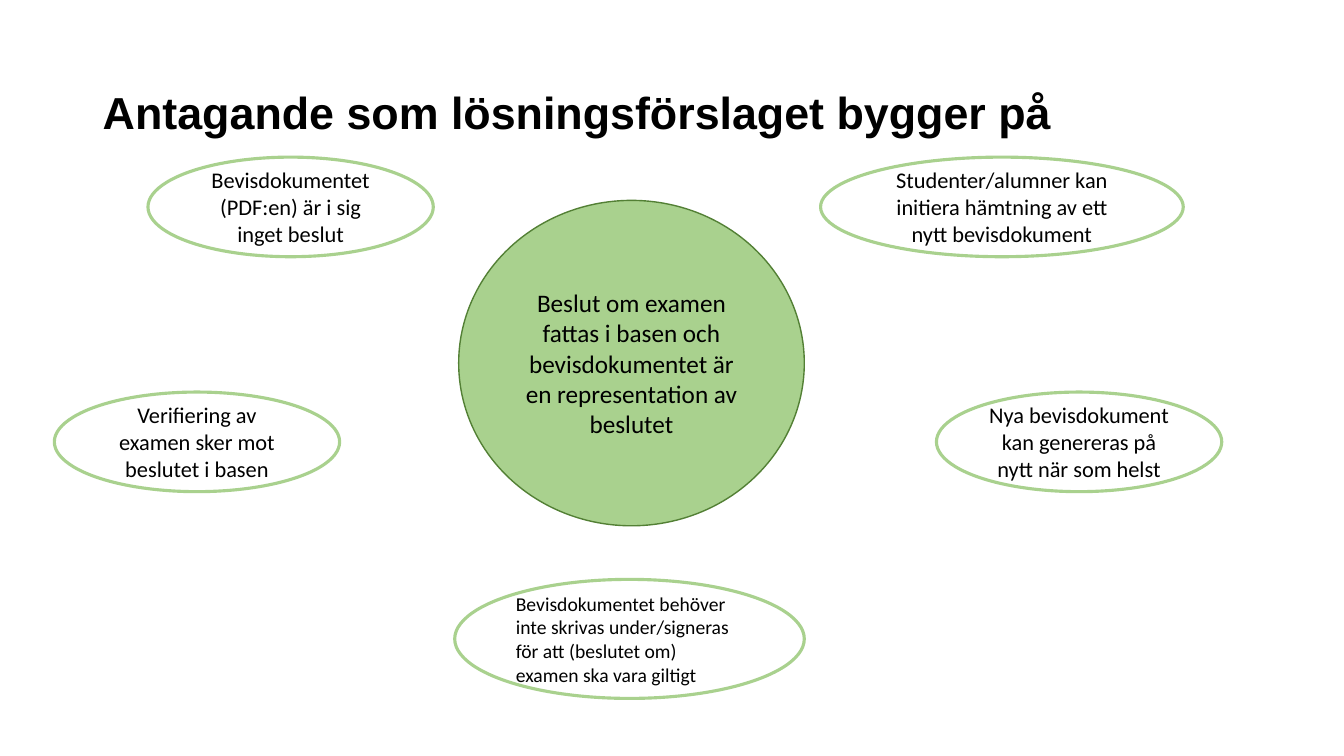
"""Build a slide with a central decision surrounded by five assumptions."""
from pptx import Presentation
from pptx.dml.color import RGBColor
from pptx.enum.shapes import MSO_SHAPE as Shape
from pptx.enum.text import MSO_ANCHOR as Anchor, PP_ALIGN as Align
from pptx.util import Cm, Pt

COLORS = {"text": "000000", "white": "FFFFFF", "green": "A9D18E", "dark": "538035"}
TITLE = "Antagande som lösningsförslaget bygger på"
DECISION = ("Beslut om examen fattas i basen och bevisdokumentet är "
            "en representation av beslutet")
UPPER, LOWER = 3.96, 9.88
WIDTH, HEIGHT = 7.19, 2.51
ASSUMPTIONS = [
    ("Verifiering av examen sker mot beslutet i basen",
     (1.37, LOWER, WIDTH, HEIGHT), {}),
    ("Bevisdokumentet (PDF:en) är i sig inget beslut",
     (3.73, UPPER, WIDTH, HEIGHT), {}),
    ("Bevisdokumentet behöver inte skrivas under/signeras för att "
     "(beslutet om) examen ska vara giltigt",
     (11.46, 14.6, 8.81, 3), {"size": 14, "align": Align.LEFT}),
    ("Nya bevisdokument kan genereras på nytt när som helst",
     (23.6, LOWER, WIDTH, HEIGHT), {}),
    ("Studenter/alumner kan initiera hämtning av ett nytt bevisdokument",
     (20.68, UPPER, 9.14, HEIGHT), {}),
]


def color(name):
    return RGBColor.from_string(COLORS[name])


def write(sp, text, size=16, font="Calibri", bold=False, align=Align.CENTER, spacing=1.0):
    tf = sp.text_frame
    tf.word_wrap = True
    tf.vertical_anchor = Anchor.MIDDLE
    p = tf.paragraphs[0]
    p.alignment = align
    p.line_spacing = spacing
    r = p.add_run()
    r.text = text
    r.font.name, r.font.size, r.font.bold = font, Pt(size), bold
    r.font.color.rgb = color("text")


def add_ellipse(s, box, fill, line, weight):
    sp = s.shapes.add_shape(Shape.OVAL, *map(Cm, box))
    sp.shadow.inherit = False
    sp.fill.solid()
    sp.fill.fore_color.rgb = color(fill)
    sp.line.color.rgb = color(line)
    sp.line.width = Pt(weight)
    return sp


def main():
    prs = Presentation()
    prs.slide_width, prs.slide_height = Cm(33.87), Cm(19.05)
    s = prs.slides.add_slide(prs.slide_layouts[6])
    title = s.shapes.add_textbox(*map(Cm, (2.34, 1.88, 29.21, 2.03)))
    write(title, TITLE, size=32, font="Arial", bold=True, align=Align.LEFT, spacing=0.9)
    center = add_ellipse(s, (11.56, 5.05, 8.71, 8.2), "green", "dark", 1)
    write(center, DECISION, size=18)
    for text, box, style in ASSUMPTIONS:
        write(add_ellipse(s, box, "white", "green", 2.25), text, **style)
    prs.save("out.pptx")


if __name__ == "__main__":
    main()
